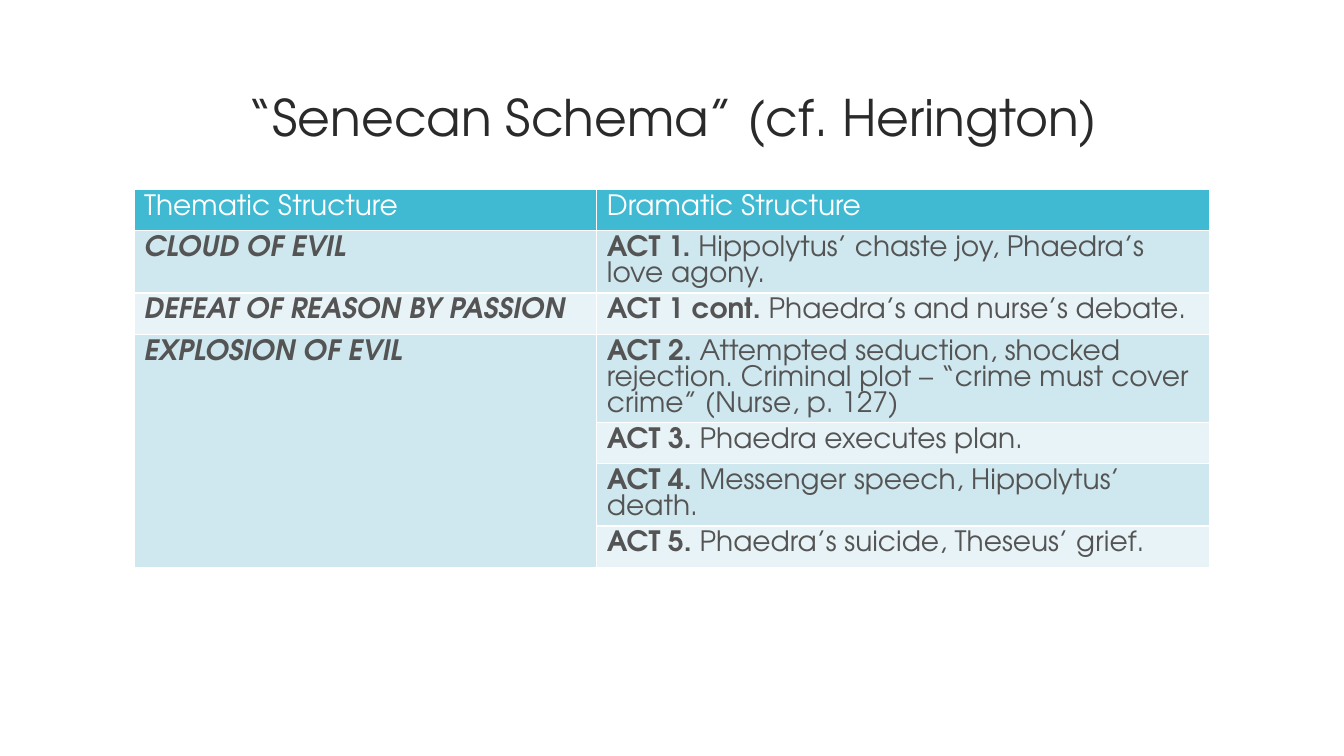
from lxml.etree import SubElement
from pptx import Presentation
from pptx.dml.color import RGBColor
from pptx.enum.text import MSO_ANCHOR as Anchor, PP_ALIGN as Align
from pptx.oxml.ns import qn
from pptx.util import Inches, Pt

COLORS = {
    "title": "2A2A2A",
    "body": "545454",
    "white": "FFFFFF",
    "header": "40BAD2",
    "band_dark": "CFE7EE",
    "band_light": "E8F3F7",
}

HEADINGS = ["Thematic Structure", "Dramatic Structure"]

# Theme, act label, what happens; a theme of None continues the one above
ACTS = [
    ("CLOUD OF EVIL", "ACT 1.", " Hippolytus’ chaste joy, Phaedra’s love agony."),
    ("DEFEAT OF REASON BY PASSION", "ACT 1 cont.", " Phaedra’s and nurse’s debate."),
    ("EXPLOSION OF EVIL", "ACT 2.",
     " Attempted seduction, shocked rejection. Criminal plot – “crime must cover crime” (Nurse, p. 127)"),
    (None, "ACT 3.", " Phaedra executes plan."),
    (None, "ACT 4.", " Messenger speech, Hippolytus’ death."),
    (None, "ACT 5.", " Phaedra’s suicide, Theseus’ grief."),
]


class SlideBuilder:
    font_name = "TeX Gyre Adventor"
    body_size = 20
    body_line = 18.6
    border_width = 1

    def __init__(self, slide):
        self.slide = slide

    def add_run(self, paragraph, text, color, size=body_size, **formats):
        run = paragraph.add_run()
        run.text = text
        values = {"name": self.font_name, "size": Pt(size), **formats}
        for attribute, value in values.items():
            setattr(run.font, attribute, value)
        run.font.color.rgb = RGBColor.from_string(COLORS[color])

    def add_title(self, text, left, top, width, height):
        shape = self.slide.shapes.add_textbox(
            Inches(left), Inches(top), Inches(width), Inches(height))
        frame = shape.text_frame
        frame.word_wrap = True
        frame.vertical_anchor = Anchor.MIDDLE
        paragraph = frame.paragraphs[0]
        paragraph.alignment = Align.CENTER
        paragraph.line_spacing = 0.9
        self.add_run(paragraph, text, "title", size=36)

    def add_table(self, left, top, column_widths, row_height, row_count):
        shape = self.slide.shapes.add_table(
            row_count, len(column_widths), Inches(left), Inches(top),
            Inches(sum(column_widths)), Inches(row_height * row_count))
        table = shape.table
        for column, width in zip(table.columns, column_widths):
            column.width = Inches(width)
        for row in table.rows:
            row.height = Inches(row_height)
        return table

    def fill_cell(self, cell, fill, runs):
        # Borders come before the fill in the cell properties
        properties = cell._tc.get_or_add_tcPr()
        for side in "LRTB":
            line = SubElement(properties, qn(f"a:ln{side}"), w=str(Pt(self.border_width)))
            solid = SubElement(line, qn("a:solidFill"))
            SubElement(solid, qn("a:srgbClr"), val=COLORS["white"])
        cell.fill.solid()
        cell.fill.fore_color.rgb = RGBColor.from_string(COLORS[fill])

        # A fixed line height keeps the rows compact
        paragraph = cell.text_frame.paragraphs[0]
        paragraph.line_spacing = Pt(self.body_line)
        paragraph.font.size = Pt(self.body_size)
        for text, color, formats in runs:
            self.add_run(paragraph, text, color, **formats)


def main():
    presentation = Presentation()
    presentation.slide_width = Inches(13.33)
    presentation.slide_height = Inches(7.5)
    slide = presentation.slides.add_slide(presentation.slide_layouts[6])
    builder = SlideBuilder(slide)

    builder.add_title("“Senecan Schema” (cf. Herington)", 1.33, 0.47, 10.68, 1.45)

    # Header row
    table = builder.add_table(1.33, 1.88, [4.59, 6.08], 0.41, len(ACTS) + 1)
    for column, heading in enumerate(HEADINGS):
        builder.fill_cell(table.cell(0, column), "header",
                          [(heading, "white", {"bold": False})])

    # Acts in alternating bands
    for row, (theme, act, events) in enumerate(ACTS, start=1):
        band = "band_dark" if row % 2 else "band_light"
        theme_runs = [(theme, "body", {"bold": True, "italic": True})] if theme else []
        builder.fill_cell(table.cell(row, 0), band, theme_runs)
        builder.fill_cell(table.cell(row, 1), band, [(act, "body", {"bold": True}),
                                                     (events, "body", {"bold": False})])

    # The last theme spans every remaining act
    table.cell(3, 0).merge(table.cell(len(ACTS), 0))

    presentation.save("out.pptx")


if __name__ == "__main__":
    main()
